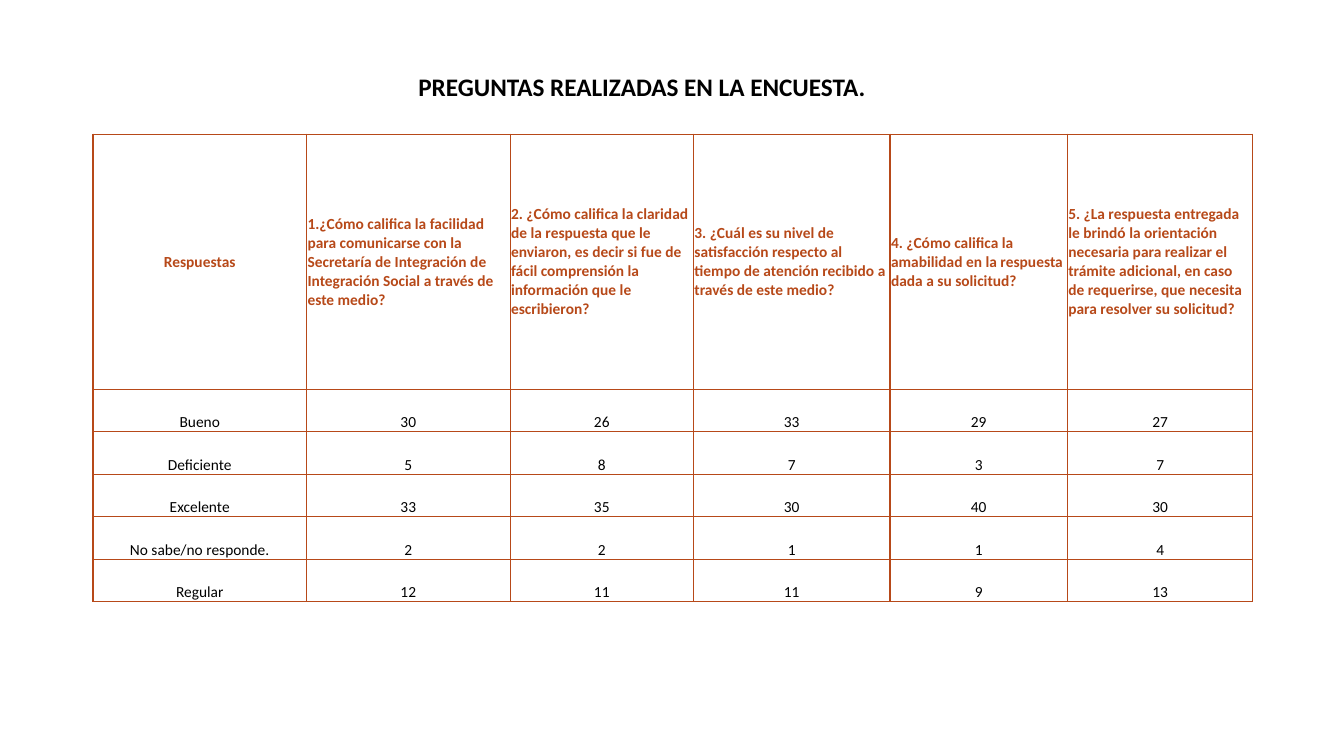
"""Build the survey results slide with its table of answers per question."""
from lxml.etree import SubElement
from pptx import Presentation
from pptx.dml.color import RGBColor
from pptx.enum.text import MSO_ANCHOR as Anchor, MSO_AUTO_SIZE as AutoSize, PP_ALIGN as Align
from pptx.oxml.ns import qn
from pptx.util import Pt

COLORS = {"rust": "B74919", "black": "000000"}
COLUMN_WIDTHS = [152.6, 145.4, 131, 140.4, 126.7, 132.5]
HEADER_HEIGHT, ROW_HEIGHT = 182.2, 30.4
ROWS = [
    [
        "Respuestas",
        "1.¿Cómo califica la facilidad para comunicarse con la Secretaría de Integración de Integración Social a través de este medio?",
        "2. ¿Cómo califica la claridad de la respuesta que le enviaron, es decir si fue de fácil comprensión la información que le escribieron?",
        "3. ¿Cuál es su nivel de satisfacción respecto al tiempo de atención recibido a través de este medio? ",
        "4. ¿Cómo califica la amabilidad en la respuesta dada a su solicitud?",
        "5. ¿La respuesta entregada le brindó la orientación necesaria para realizar el trámite adicional, en caso de requerirse, que necesita para resolver su solicitud? ",
    ],
    ["Bueno", 30, 26, 33, 29, 27],
    ["Deficiente", 5, 8, 7, 3, 7],
    ["Excelente", 33, 35, 30, 40, 30],
    ["No sabe/no responde.", 2, 2, 1, 1, 4],
    ["Regular", 12, 11, 11, 9, 13],
]


def write(frame, text, size, color, bold, align):
    frame.text = text
    para = frame.paragraphs[0]
    para.alignment = align
    font = para.runs[0].font
    font.name, font.size, font.bold = "Calibri", Pt(size), bold
    font.color.rgb = RGBColor.from_string(COLORS[color])


def add_borders(cell, color):
    properties = cell._tc.get_or_add_tcPr()
    for position, side in enumerate(["lnL", "lnR", "lnT", "lnB"]):
        line = properties.makeelement(qn(f"a:{side}"), {"w": str(Pt(1))})
        fill = SubElement(line, qn("a:solidFill"))
        SubElement(fill, qn("a:srgbClr"), val=COLORS[color])
        properties.insert(position, line)


deck = Presentation()
deck.slide_width, deck.slide_height = Pt(960), Pt(540)
page = deck.slides.add_slide(deck.slide_layouts[5])

title = page.shapes.title
title.left, title.top, title.width, title.height = Pt(291.6), Pt(47.5), Pt(455), Pt(28.8)
write(title.text_frame, "PREGUNTAS REALIZADAS EN LA ENCUESTA.", 18, "black", True, Align.LEFT)
title.text_frame.vertical_anchor = Anchor.TOP
title.text_frame.word_wrap = True
title.text_frame.auto_size = AutoSize.SHAPE_TO_FIT_TEXT

table_height = HEADER_HEIGHT + ROW_HEIGHT * (len(ROWS) - 1)
table = page.shapes.add_table(
    len(ROWS), len(COLUMN_WIDTHS), Pt(66.4), Pt(95.8), Pt(sum(COLUMN_WIDTHS)), Pt(table_height)
).table
table.horz_banding = False
for column, width in zip(table.columns, COLUMN_WIDTHS):
    column.width = Pt(width)

for row_index, values in enumerate(ROWS):
    header = row_index == 0
    table.rows[row_index].height = Pt(HEADER_HEIGHT if header else ROW_HEIGHT)
    for column_index, value in enumerate(values):
        cell = table.cell(row_index, column_index)
        question = header and column_index > 0
        cell.fill.background()
        cell.margin_left = cell.margin_right = cell.margin_top = Pt(0.7)
        cell.margin_bottom = Pt(0)
        cell.vertical_anchor = Anchor.MIDDLE if header else Anchor.BOTTOM
        write(cell.text_frame, str(value), 11, "rust" if header else "black", header,
              Align.LEFT if question else Align.CENTER)
        add_borders(cell, "rust")

deck.save("out.pptx")
